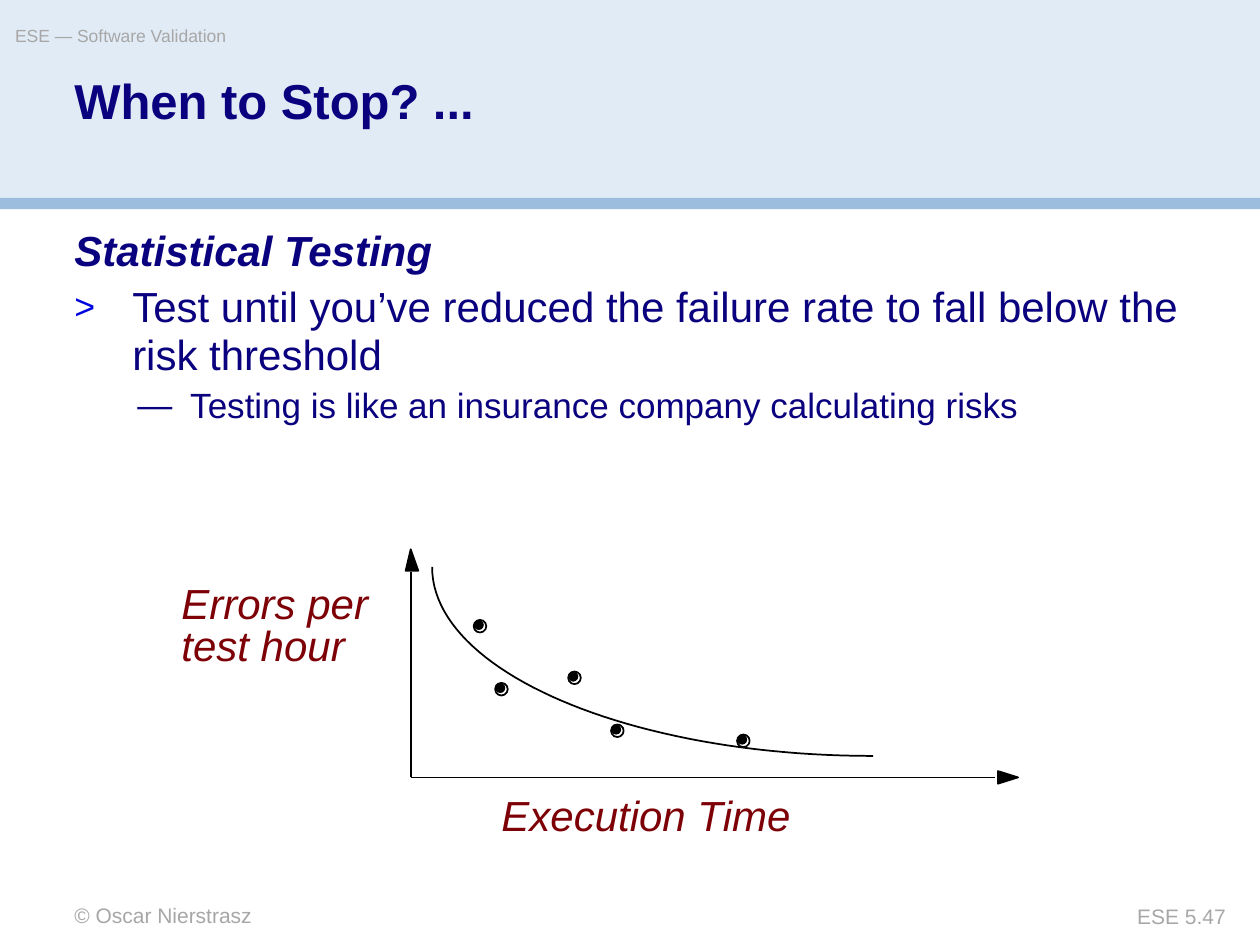
from lxml import etree
from pptx import Presentation
from pptx.dml.color import RGBColor
from pptx.enum.shapes import MSO_CONNECTOR, MSO_SHAPE
from pptx.enum.text import MSO_ANCHOR, MSO_AUTO_SIZE, PP_ALIGN
from pptx.oxml.ns import qn
from pptx.util import Inches, Pt

LEFT, RIGHT = PP_ALIGN.LEFT, PP_ALIGN.RIGHT
RECT, ROUND = MSO_SHAPE.RECTANGLE, MSO_SHAPE.ROUNDED_RECTANGLE
W, H = 10, 7.5
MARGIN, TEXT_W = 0.59, 8.83
FONT = "Arial"
HEX = {"band": "E1EBF5", "rule": "9CBDDE", "navy": "0A017F", "blue": "0005DF",
       "grey": "A7A7A7", "red": "7E0007", "black": "000000"}

# Content
TITLE = "When to Stop? ..."
BODY = [  # text, size, bold italic, left indent, hanging, bullet, colour, percent
    ("Statistical Testing", 24, True, 0.46, 0.46, None, None, None),
    ("Test until you’ve reduced the failure rate to fall below the risk threshold",
     24, False, 0.46, 0.46, ">", "blue", 85),
    ("Testing is like an insurance company calculating risks",
     20, False, 0.92, 0.42, "—", "navy", 100),
]
NOTES = [  # text, box, size, align
    ("ESE — Software Validation", (0.12, 0.2, 5.9, 0.28), 10, LEFT),
    ("© Oscar Nierstrasz", (MARGIN, 7.16, 4.17, 0.2), 12, LEFT),
    ("ESE 5.47", (8.25, 7.17, 1.48, 0.2), 12, RIGHT),
]
LABELS = [
    ("Errors per", (1.44, 4.58, 1.57, 0.4)),
    ("test hour", (1.44, 4.92, 1.3, 0.4)),
    ("Execution Time", (3.98, 6.27, 2.35, 0.4)),
]
BANDS = [("band", 0, 1.58), ("rule", 1.57, 0.09)]
ORIGIN = (3.26, 6.17)
AXES = [  # line end, arrow outline
    ((3.26, 4.54), [(3.22, 4.53), (3.26, 4.36), (3.32, 4.53)]),
    ((7.9, 6.17), [(7.92, 6.12), (8.08, 6.17), (7.92, 6.22)]),
]
CURVE = [(6.93, 6), (5, 6), (3.43, 5.33), (3.43, 4.5)]
DOTS = [(3.76, 4.92), (3.93, 5.42), (4.51, 5.33), (4.85, 5.75), (5.85, 5.83)]


def rgb(name):
    return RGBColor.from_string(HEX[name])


def paint(shape, fill=None, line=None):
    shape.shadow.inherit = False
    if fill:
        shape.fill.solid()
        shape.fill.fore_color.rgb = rgb(fill)
    else:
        shape.fill.background()
    if line:
        shape.line.color.rgb = rgb(line)
        shape.line.width = Pt(1)
    else:
        shape.line.fill.background()


def add_shape(kind, box, **look):
    shape = slide.shapes.add_shape(kind, *map(Inches, box))
    paint(shape, **look)
    return shape


def add_path(points, close, **look):
    pts = [(Inches(x), Inches(y)) for x, y in points]
    path = slide.shapes.build_freeform(*pts[0])
    path.add_line_segments(pts[1:], close=close)
    paint(path.convert_to_shape(), **look)


def set_frame(shape, box):
    shape.left, shape.top, shape.width, shape.height = map(Inches, box)
    frame = shape.text_frame
    frame.margin_left = frame.margin_right = 0
    frame.margin_top = frame.margin_bottom = 0
    frame.word_wrap = True
    frame.auto_size = MSO_AUTO_SIZE.NONE
    frame.vertical_anchor = MSO_ANCHOR.TOP
    return frame


def add_run(para, text, size, color, bold=False, italic=False, align=LEFT):
    para.alignment = align
    run = para.add_run()
    run.text = text
    font = run.font
    font.name, font.size = FONT, Pt(size)
    font.bold, font.italic = bold, italic
    font.color.rgb = rgb(color)


def add_text(text, box, size, color, **style):
    frame = set_frame(slide.shapes.add_textbox(0, 0, 0, 0), box)
    add_run(frame.paragraphs[0], text, size, color, **style)


def set_bullet(props, char, color, share):
    tint = etree.SubElement(props, qn("a:buClr"))
    etree.SubElement(tint, qn("a:srgbClr"), val=HEX[color])
    etree.SubElement(props, qn("a:buSzPct"), val=str(share * 1000))
    etree.SubElement(props, qn("a:buFont"), typeface=FONT)
    etree.SubElement(props, qn("a:buChar"), char=char)


def bezier(ctrl, steps=48):
    a, b, c, d = ctrl
    for n in range(steps + 1):
        t = n / steps
        u = 1 - t
        yield tuple(u**3 * a[k] + 3 * u * u * t * b[k] + 3 * u * t * t * c[k]
                    + t**3 * d[k] for k in (0, 1))


deck = Presentation()
deck.slide_width, deck.slide_height = Inches(W), Inches(H)
slide = deck.slides.add_slide(deck.slide_layouts[5])

# Header band and title
for color, top, height in BANDS:
    add_shape(RECT, (0, top, W, height), fill=color)
title = slide.shapes.title
slide.shapes._spTree.append(title._element)
head = set_frame(title, (MARGIN, 0.61, TEXT_W, 0.89)).paragraphs[0]
head.line_spacing = 0.9
add_run(head, TITLE, 28, "navy", bold=True)

# Header and footer notes
for text, box, size, align in NOTES:
    add_text(text, box, size, "grey", align=align)

# Body text
body = set_frame(slide.shapes.add_textbox(0, 0, 0, 0), (MARGIN, 1.81, TEXT_W, 4.92))
for i, (text, size, strong, indent, hang, char, color, share) in enumerate(BODY):
    para = body.add_paragraph() if i else body.paragraphs[0]
    para.line_spacing, para.space_before = 0.95, Pt(size * 0.2)
    add_run(para, text, size, "navy", bold=strong, italic=strong)
    props = para._p.get_or_add_pPr()
    props.set("marL", str(Inches(indent)))
    props.set("indent", str(-Inches(hang)))
    if char:
        set_bullet(props, char, color, share)

# Axis labels
for text, box in LABELS:
    add_text(text, box, 24, "red", italic=True)

# Axes with arrow tips
for end, tip in AXES:
    axis = slide.shapes.add_connector(MSO_CONNECTOR.STRAIGHT, *map(Inches, ORIGIN + end))
    axis.line.color.rgb = rgb("black")
    axis.line.width = Pt(1)
    etree.SubElement(axis._element.spPr, qn("a:effectLst"))
    add_path(tip, True, fill="black", line="black")

# Falling curve and measured points
add_path(list(bezier(CURVE)), False, line="black")
for x, y in DOTS:
    for size, look in ((0.08, {"fill": "black"}), (0.1, {"line": "black"})):
        add_shape(ROUND, (x, y, size, size), **look).adjustments[0] = 0.5

deck.save("out.pptx")
